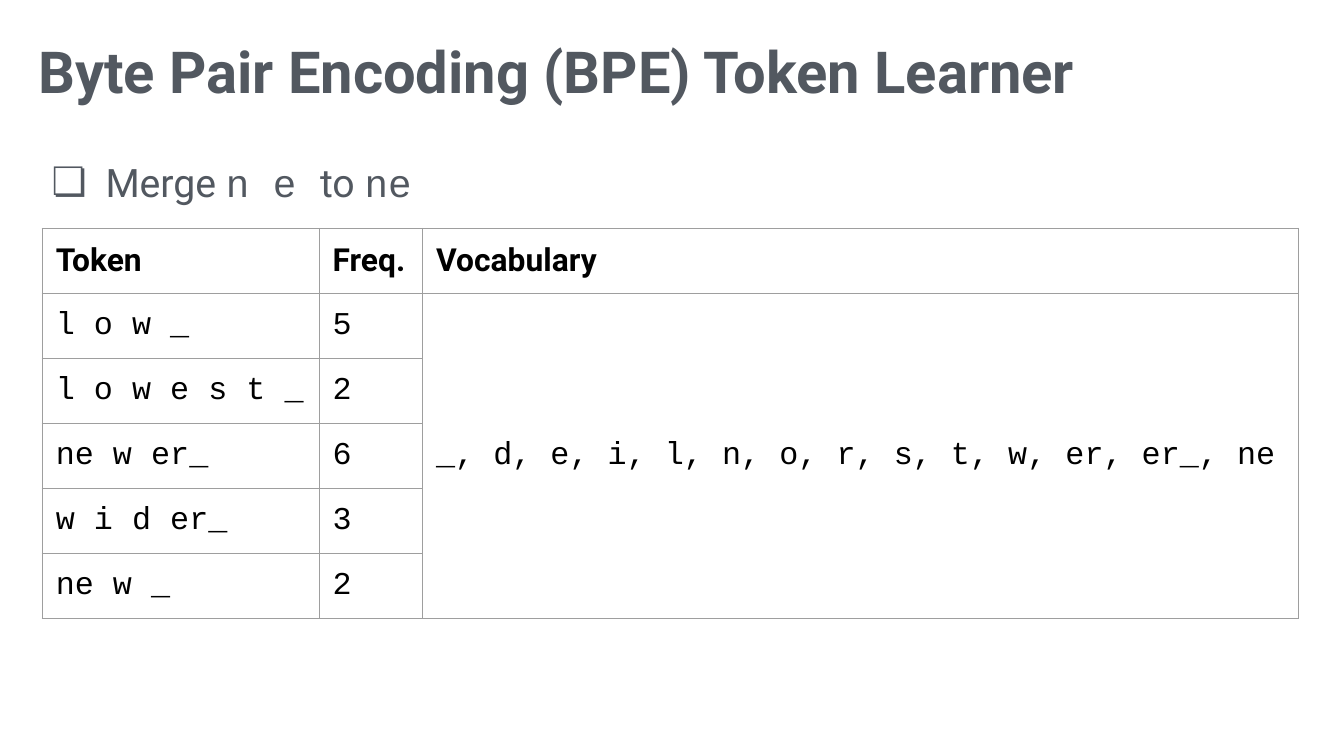
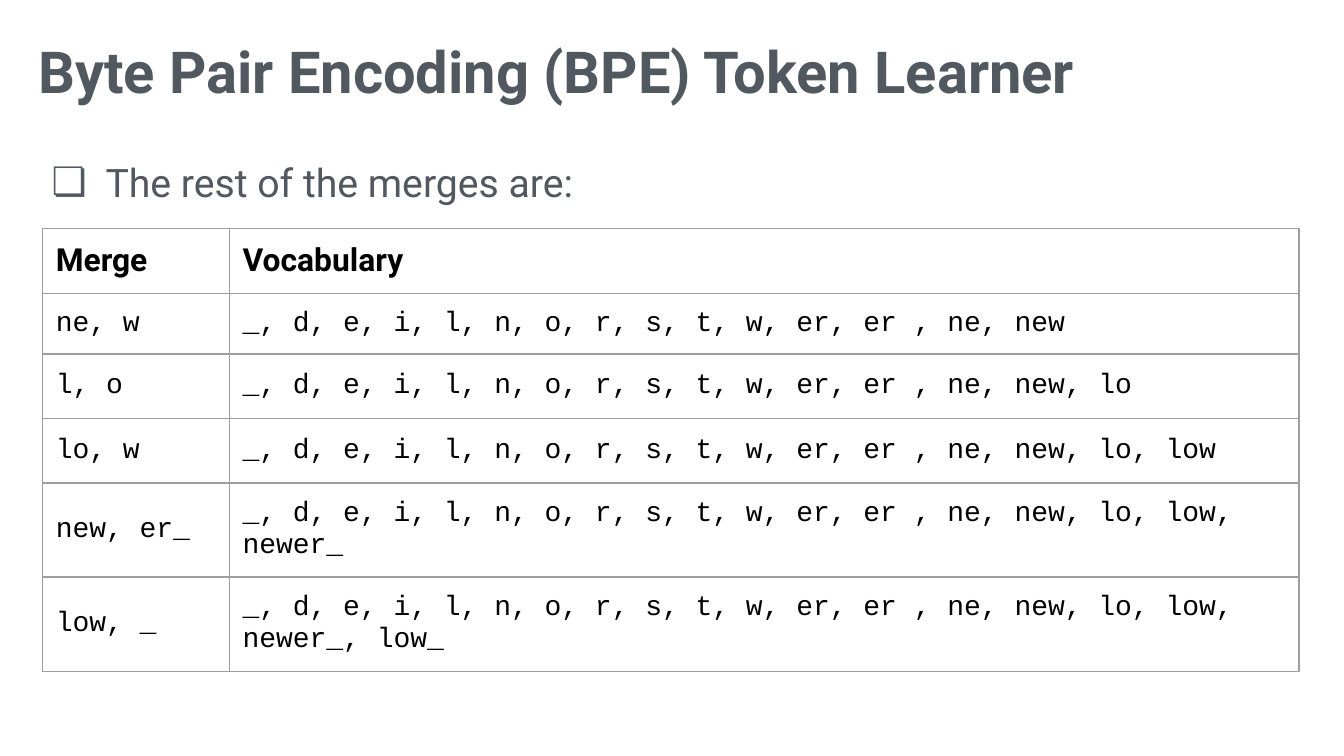
from dataclasses import dataclass

from lxml import etree
from pptx import Presentation, util as u
from pptx.dml.color import RGBColor
from pptx.enum import text
from pptx.oxml import ns


@dataclass(frozen=True)
class Theme:
    slate: str = "525860"
    black: str = "000000"
    border: str = "9E9E9E"
    border_width: float = 0.75
    sans: str = "Roboto"
    mono: str = "Courier New"
    title_size: int = 31
    body_size: int = 21
    table_size: int = 17
    small_size: int = 15


THEME = Theme()
WIDTH = u.Inches(10)
HEIGHT = WIDTH * 9 // 16
TITLE = "Byte Pair Encoding (BPE) Token Learner"


# Grid: 100 columns by 100 rows on the slide
def columns(count):
    return round(WIDTH * count / 100)


def rows(count):
    return round(HEIGHT * count / 100)


def add_run(paragraph, words, size, font=THEME.sans, color=THEME.slate, bold=False):
    run = paragraph.add_run()
    run.text = words
    run.font.size = u.Pt(size)
    run.font.bold = bold
    run.font.color.rgb = RGBColor.from_string(color)
    run.font.name = font
    # Same typeface for every script keeps the line height even
    for script in ("ea", "cs", "sym"):
        etree.SubElement(run._r.get_or_add_rPr(), ns.qn(f"a:{script}"), typeface=font)


def add_text_box(slide, left, top, width, height):
    """Add an empty wrapped text box and return its first paragraph."""
    shape = slide.shapes.add_textbox(columns(left), rows(top), columns(width), rows(height))
    frame = shape.text_frame
    frame.word_wrap = True
    frame.margin_left = frame.margin_right = u.Inches(0.06)
    frame.margin_top = frame.margin_bottom = u.Inches(0.06)
    return frame.paragraphs[0]


def add_title(slide):
    paragraph = add_text_box(slide, 2.25, 3.65, 95.3, 8.71)
    add_run(paragraph, TITLE, THEME.title_size, bold=True)


def add_bullet(slide, runs):
    """Add the bulleted line; runs are (words, font) pairs."""
    paragraph = add_text_box(slide, 2.25, 18.95, 93.5, 69.87)
    paragraph.line_spacing = 1.15
    properties = paragraph._p.get_or_add_pPr()
    properties.set("marL", str(u.Inches(0.5)))
    properties.set("indent", str(u.Inches(-0.4)))
    color = etree.SubElement(properties, ns.qn("a:buClr"))
    etree.SubElement(color, ns.qn("a:srgbClr"), val=THEME.slate)
    etree.SubElement(properties, ns.qn("a:buSzPts"), val=str(THEME.body_size * 100))
    etree.SubElement(properties, ns.qn("a:buFont"), typeface=THEME.sans)
    etree.SubElement(properties, ns.qn("a:buChar"), char="❏")
    for words, font in runs:
        add_run(paragraph, words, THEME.body_size, font)


def draw_borders(cell):
    properties = cell._tc.get_or_add_tcPr()
    for side in ("lnL", "lnR", "lnT", "lnB"):
        line = etree.SubElement(properties, ns.qn(f"a:{side}"),
                                w=str(u.Pt(THEME.border_width)))
        fill = etree.SubElement(line, ns.qn("a:solidFill"))
        etree.SubElement(fill, ns.qn("a:srgbClr"), val=THEME.border)


def add_table(slide, records, widths, heights, size):
    """Add a bordered table: sans header row, monospaced body."""
    frame = slide.shapes.add_table(len(records), len(widths), columns(3.15), rows(30.22),
                                   columns(sum(widths)), rows(sum(heights)))
    table = frame.table
    table.first_row = table.horz_banding = False
    for column, width in zip(table.columns, widths):
        column.width = columns(width)
    for row, height in zip(table.rows, heights):
        row.height = rows(height)
    for row_index, record in enumerate(records):
        for column_index in range(len(widths)):
            cell = table.cell(row_index, column_index)
            draw_borders(cell)
            cell.fill.background()
            cell.vertical_anchor = text.MSO_ANCHOR.MIDDLE
            cell.margin_left = cell.margin_right = u.Inches(0.1)
            cell.margin_top = cell.margin_bottom = u.Inches(0.1)
            paragraph = cell.text_frame.paragraphs[0]
            if column_index >= len(record):
                paragraph.font.size = u.Pt(size)
            elif row_index == 0:
                add_run(paragraph, record[column_index], THEME.table_size,
                        color=THEME.black, bold=True)
            else:
                add_run(paragraph, record[column_index], size, THEME.mono, THEME.black)
    return table


def add_slide(presentation, bullet_runs):
    slide = presentation.slides.add_slide(presentation.slide_layouts[6])
    add_bullet(slide, bullet_runs)
    add_title(slide)
    return slide


def build_token_slide(presentation):
    slide = add_slide(presentation, [("Merge ", THEME.sans), ("n e ", THEME.mono),
                                     ("to ", THEME.sans), ("ne", THEME.mono)])
    records = [
        ("Token", "Freq.", "Vocabulary"),
        ("l o w _", "5", "_, d, e, i, l, n, o, r, s, t, w, er, er_, ne"),
        ("l o w e s t _", "2"),
        ("ne w er_", "6"),
        ("w i d er_", "3"),
        ("ne w _", "2"),
    ]
    table = add_table(slide, records, [20.6, 7.7, 65.2], [7.47] * len(records),
                      THEME.table_size)
    # One vocabulary cell spans all token rows
    table.cell(1, 2).merge(table.cell(len(records) - 1, 2))


def build_merges_slide(presentation):
    slide = add_slide(presentation, [("The rest of the merges are:", THEME.sans)])
    merges = [("ne, w", "new"), ("l, o", "lo"), ("lo, w", "low"),
              ("new, er_", "newer_"), ("low, _", "low_")]
    # Each merge appends its new token to the vocabulary
    vocabulary = "_, d, e, i, l, n, o, r, s, t, w, er, er , ne"
    records = [("Merge", "Vocabulary")]
    for pair, token in merges:
        vocabulary += f", {token}"
        records.append((pair, vocabulary))
    add_table(slide, records, [13.9, 79.6], [8.53, 7.64] + [8.53] * 4, THEME.small_size)


def main():
    presentation = Presentation()
    presentation.slide_width, presentation.slide_height = WIDTH, HEIGHT
    build_token_slide(presentation)
    build_merges_slide(presentation)
    presentation.save("out.pptx")


if __name__ == "__main__":
    main()
